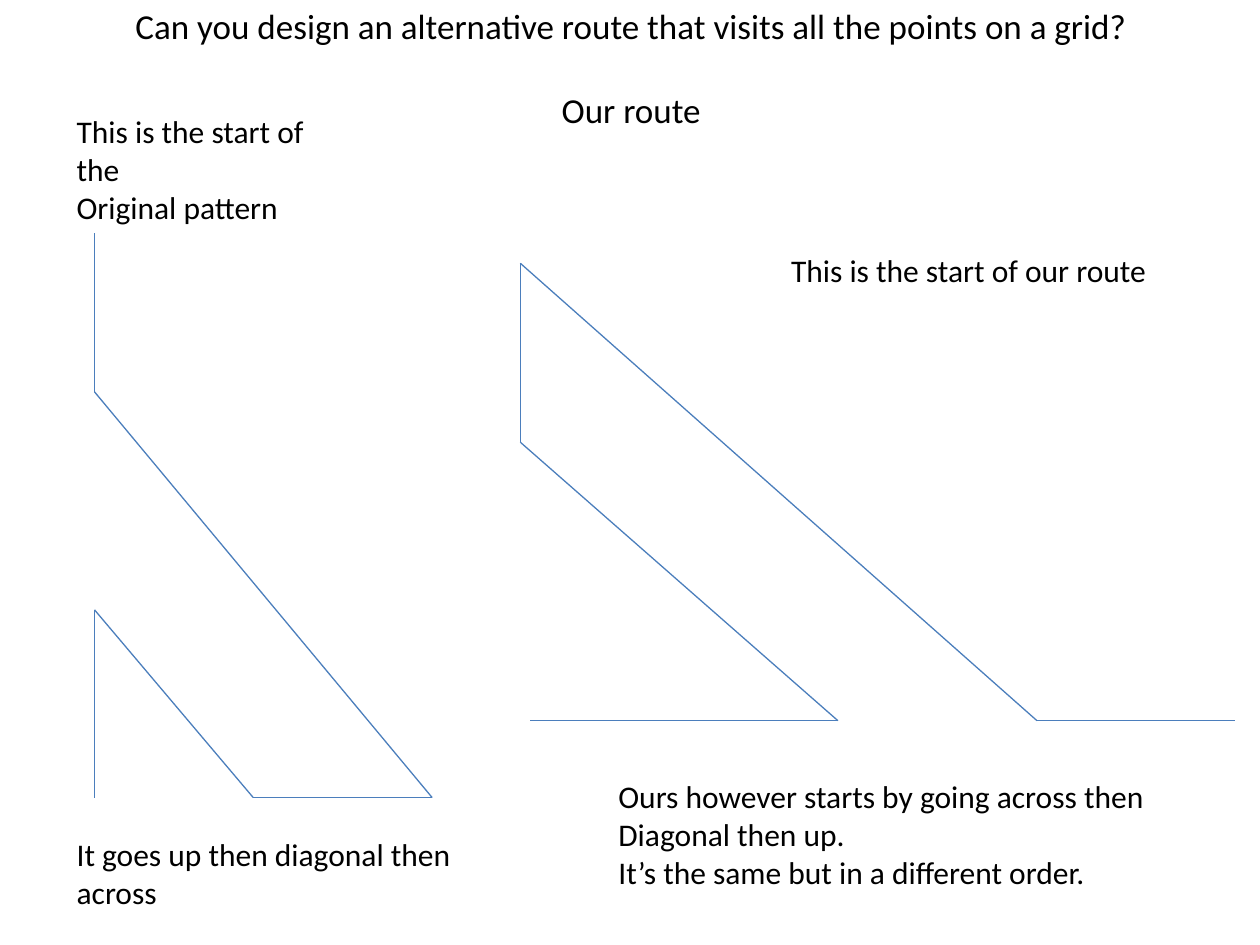
from dataclasses import dataclass
from itertools import pairwise

from lxml.etree import SubElement
from pptx import Presentation
from pptx.dml.color import RGBColor
from pptx.enum.shapes import MSO_CONNECTOR
from pptx.enum.text import MSO_ANCHOR, MSO_AUTO_SIZE, PP_ALIGN
from pptx.oxml.ns import qn
from pptx.slide import Slide
from pptx.util import Inches, Pt


@dataclass(frozen=True)
class Theme:
    font: str = "Calibri"
    text: RGBColor = RGBColor(0x00, 0x00, 0x00)
    route: RGBColor = RGBColor(0x4B, 0x7E, 0xBC)
    background: RGBColor = RGBColor(0xFF, 0xFF, 0xFF)
    title_size: Pt = Pt(20)
    note_size: Pt = Pt(18)
    route_width: Pt = Pt(0.75)
    title_gap: Pt = Pt(24)


@dataclass(frozen=True)
class TextBlock:
    left: float
    top: float
    width: float
    height: float
    lines: tuple[str, ...]
    is_title: bool = False


@dataclass(frozen=True)
class Route:
    points: tuple[tuple[float, float], ...]


THEME = Theme()

TITLE = TextBlock(0.51, -0.09, 9, 1.25, (
    "Can you design an alternative route that visits all the points on a grid?",
    "Our route",
), is_title=True)

NOTES = (
    TextBlock(0.51, 0.84, 2.36, 1.01, ("This is the start of the", "Original pattern")),
    TextBlock(0.51, 6.58, 3.62, 0.71, ("It goes up then diagonal then across",)),
    TextBlock(4.81, 6.12, 4.57, 1.01, (
        "Ours however starts by going across then",
        "Diagonal then up.",
        "It’s the same but in a different order.",
    )),
    TextBlock(6.18, 1.94, 3.15, 0.4, ("This is the start of our route",)),
)

ORIGINAL_ROUTE = Route((
    (0.75, 6.33), (0.75, 4.84), (2.01, 6.33), (3.43, 6.33), (0.75, 3.11), (0.75, 1.85),
))
# The first leg ends slightly right of the vertical leg
OUR_ROUTE = Route((
    (4.21, 5.72), (6.65, 5.72), (4.13, 3.51), (4.13, 2.09), (8.23, 5.72), (9.8, 5.72),
))


def draw_text(slide: Slide, block: TextBlock) -> None:
    box = slide.shapes.add_textbox(
        Inches(block.left), Inches(block.top), Inches(block.width), Inches(block.height))
    frame = box.text_frame
    frame.word_wrap = True
    frame.text = "\n".join(block.lines)
    if block.is_title:
        frame.auto_size = MSO_AUTO_SIZE.NONE
        frame.vertical_anchor = MSO_ANCHOR.MIDDLE
        frame.paragraphs[-1].space_before = THEME.title_gap
    else:
        frame.auto_size = MSO_AUTO_SIZE.SHAPE_TO_FIT_TEXT
    for para in frame.paragraphs:
        para.alignment = PP_ALIGN.CENTER if block.is_title else PP_ALIGN.LEFT
        for span in para.runs:
            span.font.name = THEME.font
            span.font.size = THEME.title_size if block.is_title else THEME.note_size
            span.font.color.rgb = THEME.text


def draw_route(slide: Slide, route: Route) -> None:
    group = slide.shapes.add_group_shape()
    for start, end in pairwise(route.points):
        leg = group.shapes.add_connector(
            MSO_CONNECTOR.STRAIGHT, *(Inches(value) for value in start + end))
        leg.line.color.rgb = THEME.route
        leg.line.width = THEME.route_width
        # Switch off the theme shadow
        SubElement(leg._element.spPr, qn("a:effectLst"))


def main() -> None:
    deck = Presentation()
    deck.slide_width, deck.slide_height = Inches(10), Inches(7.5)
    page = deck.slides.add_slide(deck.slide_layouts[6])
    page.background.fill.solid()
    page.background.fill.fore_color.rgb = THEME.background

    # Heading
    draw_text(page, TITLE)

    # The two routes
    for route in (ORIGINAL_ROUTE, OUR_ROUTE):
        draw_route(page, route)

    # Explanations
    for note in NOTES:
        draw_text(page, note)

    deck.save("out.pptx")


if __name__ == "__main__":
    main()
